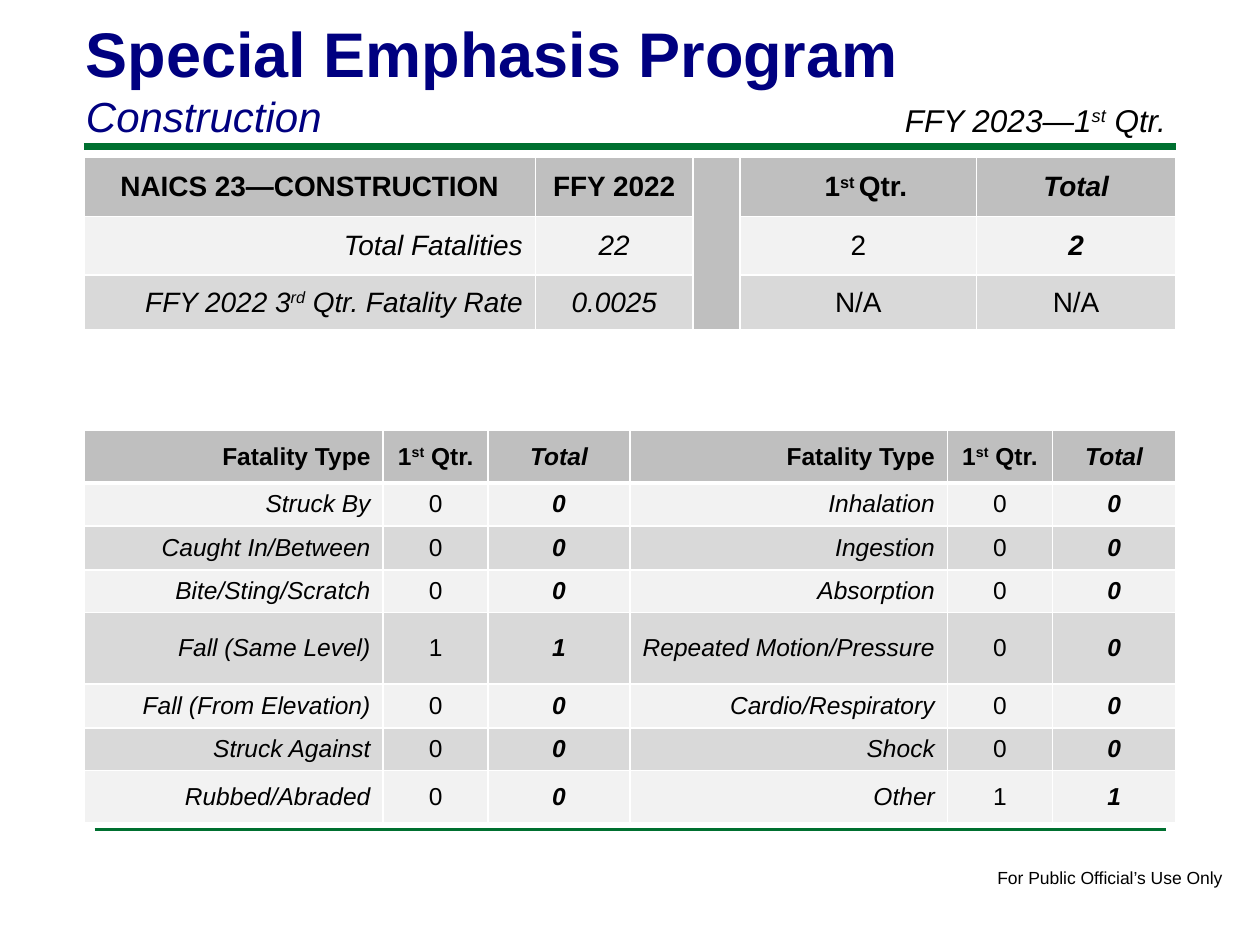
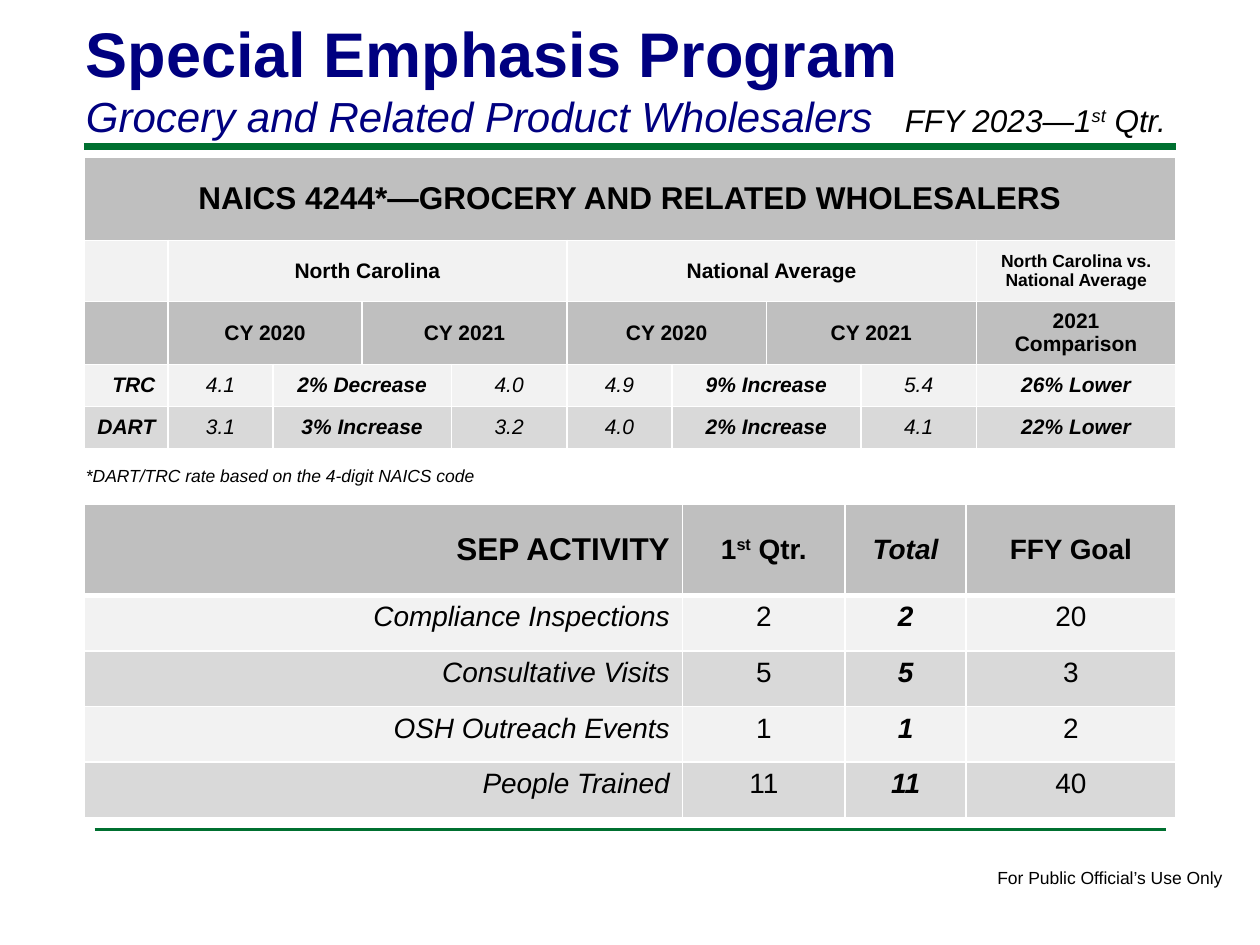
from dataclasses import dataclass

from lxml import etree
from pptx import Presentation
from pptx.dml.color import RGBColor
from pptx.enum.shapes import MSO_CONNECTOR
from pptx.enum.text import MSO_ANCHOR, PP_ALIGN
from pptx.oxml.ns import qn
from pptx.util import Inches, Pt

LINE = MSO_CONNECTOR.STRAIGHT
TOP, MID, LOW = MSO_ANCHOR.TOP, MSO_ANCHOR.MIDDLE, MSO_ANCHOR.BOTTOM
ALIGN = {"l": PP_ALIGN.LEFT, "c": PP_ALIGN.CENTER, "r": PP_ALIGN.RIGHT}
WIDE, TALL = 10, 7.5
GRID = 12
LEFT, SPAN = 8, 104


@dataclass(frozen=True)
class Theme:
    font: str = "Arial"
    ink: str = "000000"
    navy: str = "000080"
    green: str = "007030"
    white: str = "FFFFFF"
    head: str = "BFBFBF"
    light: str = "F2F2F2"
    dark: str = "D9D9D9"
    title: int = 36
    sub: int = 24
    large: int = 18
    mid: int = 16
    body: int = 14
    small: int = 12
    note: int = 10


def unit(count):
    return Inches(count / GRID)


class Deck:
    def __init__(self, theme):
        self.theme = theme
        self.file = Presentation()
        self.file.slide_width = Inches(WIDE)
        self.file.slide_height = Inches(TALL)
        self.slide = None

    def page(self, topic):
        t = self.theme
        self.slide = self.file.slides.add_slide(self.file.slide_layouts[6])
        self.rule(8, 112, 14, 4)
        self.rule(9, 111, 79, 2)
        self.text((93.8, 82, 24.1, 3.2), [("For Public Official’s Use Only", t.note, "l")], wrap=False)
        self.text((7, 0.7, 99, 13.3), [("Special Emphasis Program", t.title, "lb"), (topic, t.sub, "li")],
                  t.navy, LOW)
        self.text((85, 9, 30, 4.8), [("FFY 2023—1^st^ Qtr.", t.large, "li")])

    def rule(self, start, end, row, width):
        line = self.slide.shapes.add_connector(LINE, unit(start), unit(row), unit(end), unit(row))
        line.line.color.rgb = RGBColor.from_string(self.theme.green)
        line.line.width = Pt(width)
        etree.SubElement(line._element.spPr, qn("a:effectLst"))

    def letter(self, para, words, size, look, color):
        para.alignment = ALIGN[look[0]]
        font = para.font
        font.name, font.size = self.theme.font, Pt(size)
        font.bold, font.italic = "b" in look, "i" in look
        font.color.rgb = RGBColor.from_string(color)
        for index, part in enumerate(words.split("^")):
            if part:
                run = para.add_run()
                run.text = part
                if index % 2:
                    run._r.get_or_add_rPr().set("baseline", "30000")

    def text(self, box, lines, color=None, anchor=TOP, wrap=True):
        frame = self.slide.shapes.add_textbox(*map(unit, box)).text_frame
        frame.word_wrap = wrap
        frame.vertical_anchor = anchor
        for index, (words, size, look) in enumerate(lines):
            para = frame.add_paragraph() if index else frame.paragraphs[0]
            self.letter(para, words, size, look, color or self.theme.ink)

    def edge(self, cell, heavy):
        props = cell._tc.get_or_add_tcPr()
        for side in "LRTB":
            width = Pt(3 if side == heavy else 1)
            line = etree.SubElement(props, qn("a:ln" + side), w=str(width))
            fill = etree.SubElement(line, qn("a:solidFill"))
            etree.SubElement(fill, qn("a:srgbClr"), val=self.theme.white)

    def table(self, top, cols, rows, data, looks, tints, size, merges=(), sizes=None, heavy=False, anchor=MID):
        sizes = sizes or {}
        shape = self.slide.shapes.add_table(len(rows), len(cols), unit(LEFT), unit(top),
                                            unit(SPAN), unit(sum(rows)))
        table = shape.table
        table.first_row = table.horz_banding = False
        for col, width in zip(table.columns, cols):
            col.width = unit(width)
        for row, height in zip(table.rows, rows):
            row.height = unit(height)
        for r, words in enumerate(data):
            for c, word in enumerate(words):
                cell = table.cell(r, c)
                cell.vertical_anchor = anchor if r else MID
                self.edge(cell, {0: "B", 1: "T"}.get(r) if heavy else None)
                cell.fill.solid()
                cell.fill.fore_color.rgb = RGBColor.from_string(tints[r])
                self.letter(cell.text_frame.paragraphs[0], word, sizes.get((r, c), size),
                            looks[r][c], self.theme.ink)
        for r, c, end, last in merges:
            table.cell(r, c).merge(table.cell(end, last))
        return table


def build(deck):
    t = deck.theme
    bands = [t.head] + [t.light, t.dark] * 4

    deck.page("Construction")
    rates = deck.table(
        15, [43, 15, 4.5, 22.5, 19], [5.6, 5.6, 5.2],
        [["NAICS 23—CONSTRUCTION", "FFY 2022", "", "1^st ^Qtr.", "Total"],
         ["Total Fatalities", "22", "", "2", "2"],
         ["FFY 2022 3^rd^ Qtr. Fatality Rate", "0.0025", "", "N/A", "N/A"]],
        [["cb", "cb", "c", "cb", "cbi"], ["ri", "ci", "c", "c", "cbi"], ["ri", "ci", "c", "c", "c"]],
        bands, t.mid, merges=[(0, 2, 2, 2)])
    rates.cell(0, 3).margin_left = Inches(0.22)

    kinds = [
        ("Struck By", "0", "Inhalation", "0"),
        ("Caught In/Between", "0", "Ingestion", "0"),
        ("Bite/Sting/Scratch", "0", "Absorption", "0"),
        ("Fall (Same Level)", "1", "Repeated Motion/Pressure", "0"),
        ("Fall (From Elevation)", "0", "Cardio/Respiratory", "0"),
        ("Struck Against", "0", "Shock", "0"),
        ("Rubbed/Abraded", "0", "Other", "1"),
    ]
    deck.table(
        41, [28.5, 10, 13.5, 30.25, 10, 11.75], [5, 4.1, 4.2, 4.05, 6.8, 4.2, 4.05, 5],
        [["Fatality Type", "1^st^ Qtr.", "Total"] * 2]
        + [[a, m, m, b, n, n] for a, m, b, n in kinds],
        [["rb", "cb", "cbi"] * 2] + [["ri", "c", "cbi"] * 2] * len(kinds),
        bands, t.body, heavy=True)

    deck.page("Grocery and Related Product Wholesalers")
    deck.text((7, 43.7, 40.4, 3.2), [("*DART/TRC rate based on the 4-digit NAICS code", t.note, "li")])
    acts = [("Compliance Inspections", "2", "20"), ("Consultative Visits", "5", "3"),
            ("OSH Outreach Events", "1", "2"), ("People Trained", "11", "40")]
    deck.table(
        48, [57, 15.5, 11.5, 20], [8.7] + [5.3] * len(acts),
        [["SEP ACTIVITY", "1^st^ Qtr.", "Total", "FFY Goal"]] + [[a, n, n, goal] for a, n, goal in acts],
        [["rb", "cb", "cbi", "cb"]] + [["ri", "c", "cbi", "c"]] * len(acts),
        bands, t.mid, sizes={(0, 0): t.large}, heavy=True, anchor=TOP)

    years = ["CY 2020", "", "CY 2021", ""]
    rate = ["rbi"] + ["ci", "cbi", "cbi", "ci"] * 2 + ["cbi"]
    pairs = [(2, c, 2, c + 1) for c in (1, 3, 5, 7)]
    shifts = [(r, c, r, c + 1) for r in (3, 4) for c in (2, 6)]
    deck.table(
        15, [8, 10, 8.5, 8.5, 11, 10, 9, 9, 11, 19], [7.9, 5.8, 6, 4, 4],
        [["NAICS 4244*—GROCERY AND RELATED WHOLESALERS"] + [""] * 9,
         ["", "North Carolina", "", "", "", "National Average", "", "", "",
          "North Carolina vs. National Average"],
         [""] + years * 2 + ["2021 Comparison"],
         ["TRC", "4.1", "2% Decrease", "", "4.0", "4.9", "9% Increase", "", "5.4", "26% Lower"],
         ["DART", "3.1", "3% Increase", "", "3.2", "4.0", "2% Increase", "", "4.1", "22% Lower"]],
        [["cb"] * 10] * 3 + [rate] * 2,
        [t.head, t.light, t.head, t.light, t.dark], t.small,
        merges=[(0, 0, 0, 9), (1, 1, 1, 4), (1, 5, 1, 8)] + pairs + shifts,
        sizes={(0, 0): t.large, (1, 9): t.note})


def main():
    deck = Deck(Theme())
    build(deck)
    deck.file.save("out.pptx")


if __name__ == "__main__":
    main()
